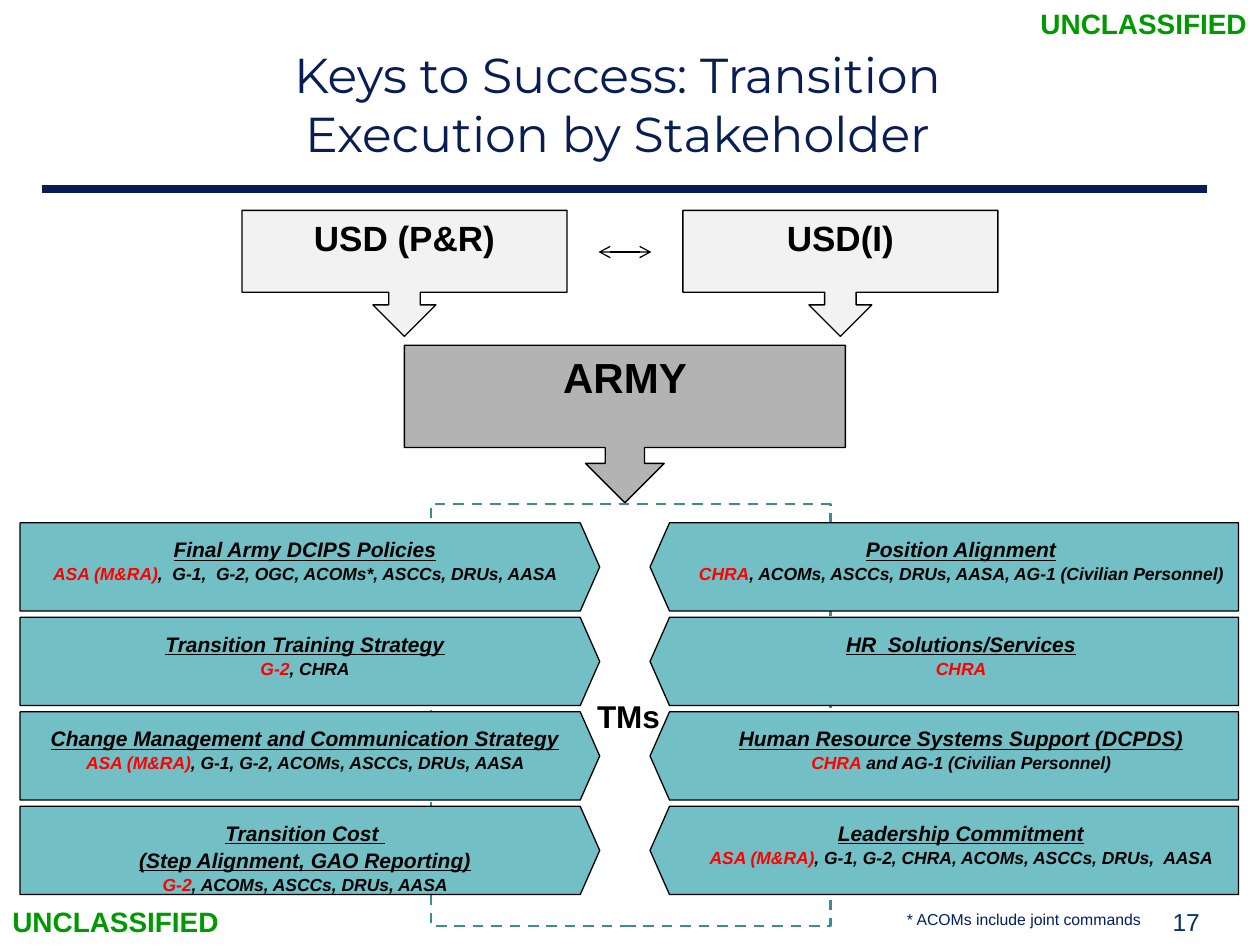
"""Build the slide on transition execution by stakeholder."""
from lxml.etree import SubElement
from pptx import Presentation
from pptx.dml.color import RGBColor
from pptx.enum.dml import MSO_LINE
from pptx.enum.shapes import MSO_CONNECTOR, MSO_SHAPE
from pptx.enum.text import MSO_ANCHOR, MSO_AUTO_SIZE, PP_ALIGN
from pptx.oxml.ns import qn
from pptx.util import Inches, Pt

COLORS = {
    "navy": "081D54", "green": "009900", "black": "000000", "red": "FF0000",
    "white": "FFFFFF", "dash": "3C8C93", "teal": "72BFC5", "gray": "B3B3B3",
    "light": "F2F2F2", "number": "003366", "note": "002060",
}


def format_run(run, size, color, bold=False, name="Arial"):
    """Set the font of one run."""
    run.font.name = name
    run.font.size = Pt(size)
    run.font.bold = bold
    run.font.color.rgb = RGBColor.from_string(COLORS[color])


def add_box(kind, left, top, width, height, fill, line="black", weight=0.75):
    """Add a filled and outlined shape with its text at the top."""
    shape = slide.shapes.add_shape(
        kind, Inches(left), Inches(top), Inches(width), Inches(height))
    shape.shadow.inherit = False
    shape.fill.solid()
    shape.fill.fore_color.rgb = RGBColor.from_string(COLORS[fill])
    shape.line.color.rgb = RGBColor.from_string(COLORS[line])
    shape.line.width = Pt(weight)
    shape.text_frame.vertical_anchor = MSO_ANCHOR.TOP
    return shape


presentation = Presentation()
presentation.slide_width = Inches(10)
presentation.slide_height = Inches(7.5)
slide = presentation.slides.add_slide(presentation.slide_layouts[5])

team_frame = add_box(MSO_SHAPE.RECTANGLE, 3.42, 4, 3.17, 3.35, "white", "dash", 1.5)
team_frame.line.dash_style = MSO_LINE.DASH

title = slide.shapes.title
title.left, title.top = Inches(1.69), Inches(0.21)
title.width, title.height = Inches(6.42), Inches(1.22)
title.text_frame.text = "Keys to Success: Transition\vExecution by Stakeholder"
title.text_frame.auto_size = MSO_AUTO_SIZE.NONE
title.text_frame.vertical_anchor = MSO_ANCHOR.MIDDLE
title.text_frame.paragraphs[0].alignment = PP_ALIGN.CENTER
for run in title.text_frame.paragraphs[0].runs:
    format_run(run, 28, "navy", name="Montserrat")

columns = [
    (MSO_SHAPE.PENTAGON, 0.16, 4.6, False, 0.19, -0.19, [
        (["Final Army DCIPS Policies"],
         "ASA (M&RA)", ",  G-1,  G-2, OGC, ACOMs*, ASCCs, DRUs, AASA"),
        (["Transition Training Strategy"], "G-2", ", CHRA"),
        (["Change Management and Communication Strategy"],
         "ASA (M&RA)", ", G-1, G-2, ACOMs, ASCCs, DRUs, AASA"),
        (["Transition Cost ", "(Step Alignment, GAO Reporting)"],
         "G-2", ", ACOMs, ASCCs, DRUs, AASA"),
    ]),
    (MSO_SHAPE.PENTAGON, 5.16, 4.67, True, 0.4, -0.21, [
        (["Position Alignment"],
         "CHRA", ", ACOMs, ASCCs, DRUs, AASA, AG-1 (Civilian Personnel)"),
        (["HR  Solutions/Services"], "CHRA", ""),
        (["Human Resource Systems Support (DCPDS)"],
         "CHRA", " and AG-1 (Civilian Personnel)"),
        (["Leadership Commitment"],
         "ASA (M&RA)", ", G-1, G-2, CHRA, ACOMs, ASCCs, DRUs,  AASA"),
    ]),
]
for kind, left, width, flipped, margin, indent, tasks in columns:
    for row, (headings, lead, partners) in enumerate(tasks):
        task_box = add_box(kind, left, 4.15 + 0.75 * row, width, 0.7, "teal")
        task_box.adjustments[0] = 0.22
        if flipped:
            task_box._element.spPr.xfrm.set("flipH", "1")
        frame = task_box.text_frame
        frame.margin_left = frame.margin_right = Inches(0.1)
        frame.margin_top = frame.margin_bottom = Inches(0.1)
        frame.text = "\n".join(headings + [lead])
        for paragraph in frame.paragraphs:
            paragraph.alignment = PP_ALIGN.CENTER
            paragraph.line_spacing = 1.06
            properties = paragraph._p.get_or_add_pPr()
            properties.set("marL", str(Inches(margin)))
            properties.set("indent", str(Inches(indent)))
        for paragraph in frame.paragraphs[:-1]:
            format_run(paragraph.runs[0], 12, "black", True)
            paragraph.runs[0].font.underline = True
        owners = frame.paragraphs[-1]
        format_run(owners.runs[0], 10, "red", True)
        if partners:
            partner_run = owners.add_run()
            partner_run.text = partners
            format_run(partner_run, 10, "black", True)
        for paragraph in frame.paragraphs:
            for run in paragraph.runs:
                run.font.italic = True

callouts = [
    ("ARMY", 3.21, 2.74, 3.5, 1.25, "gray", 24),
    ("USD (P&R)", 1.92, 1.67, 2.58, 1, "light", 20),
    ("USD(I)", 5.42, 1.67, 2.5, 1, "light", 20),
]
for text, left, top, width, height, fill, size in callouts:
    callout = add_box(MSO_SHAPE.DOWN_ARROW_CALLOUT, left, top, width, height, fill)
    callout.text_frame.text = text
    paragraph = callout.text_frame.paragraphs[0]
    paragraph.alignment = PP_ALIGN.CENTER
    format_run(paragraph.runs[0], size, "black", True)

labels = [
    ("UNCLASSIFIED", 8.16, 0, 1.84, 0.37, 16, "green", True, False, PP_ALIGN.LEFT),
    ("UNCLASSIFIED", 0, 7.13, 1.84, 0.37, 16, "green", True, False, PP_ALIGN.LEFT),
    ("17", 7.83, 7.15, 3.17, 0.52, 14, "number", False, True, PP_ALIGN.CENTER),
    ("* ACOMs include joint commands", 7, 7.17, 2.25, 0.25, 9, "note", False, True,
     PP_ALIGN.CENTER),
    ("TMs", 4.64, 5.48, 0.83, 0.4, 18, "black", True, True, PP_ALIGN.LEFT),
]
for text, left, top, width, height, size, color, bold, wrap, alignment in labels:
    label = slide.shapes.add_textbox(
        Inches(left), Inches(top), Inches(width), Inches(height))
    label.text_frame.word_wrap = wrap
    label.text_frame.text = text
    paragraph = label.text_frame.paragraphs[0]
    paragraph.alignment = alignment
    format_run(paragraph.runs[0], size, color, bold)

lines = [
    (0.33, 9.58, 1.5, "navy", 4.5, False),
    (4.75, 5.17, 2, "black", 0.75, True),
]
for start, end, height, color, weight, arrows in lines:
    connector = slide.shapes.add_connector(
        MSO_CONNECTOR.STRAIGHT, Inches(start), Inches(height), Inches(end), Inches(height))
    connector.line.color.rgb = RGBColor.from_string(COLORS[color])
    connector.line.width = Pt(weight)
    if arrows:
        for tag in ("a:headEnd", "a:tailEnd"):
            SubElement(connector.line._get_or_add_ln(), qn(tag), type="arrow")
    SubElement(connector._element.spPr, qn("a:effectLst"))

presentation.save("out.pptx")
